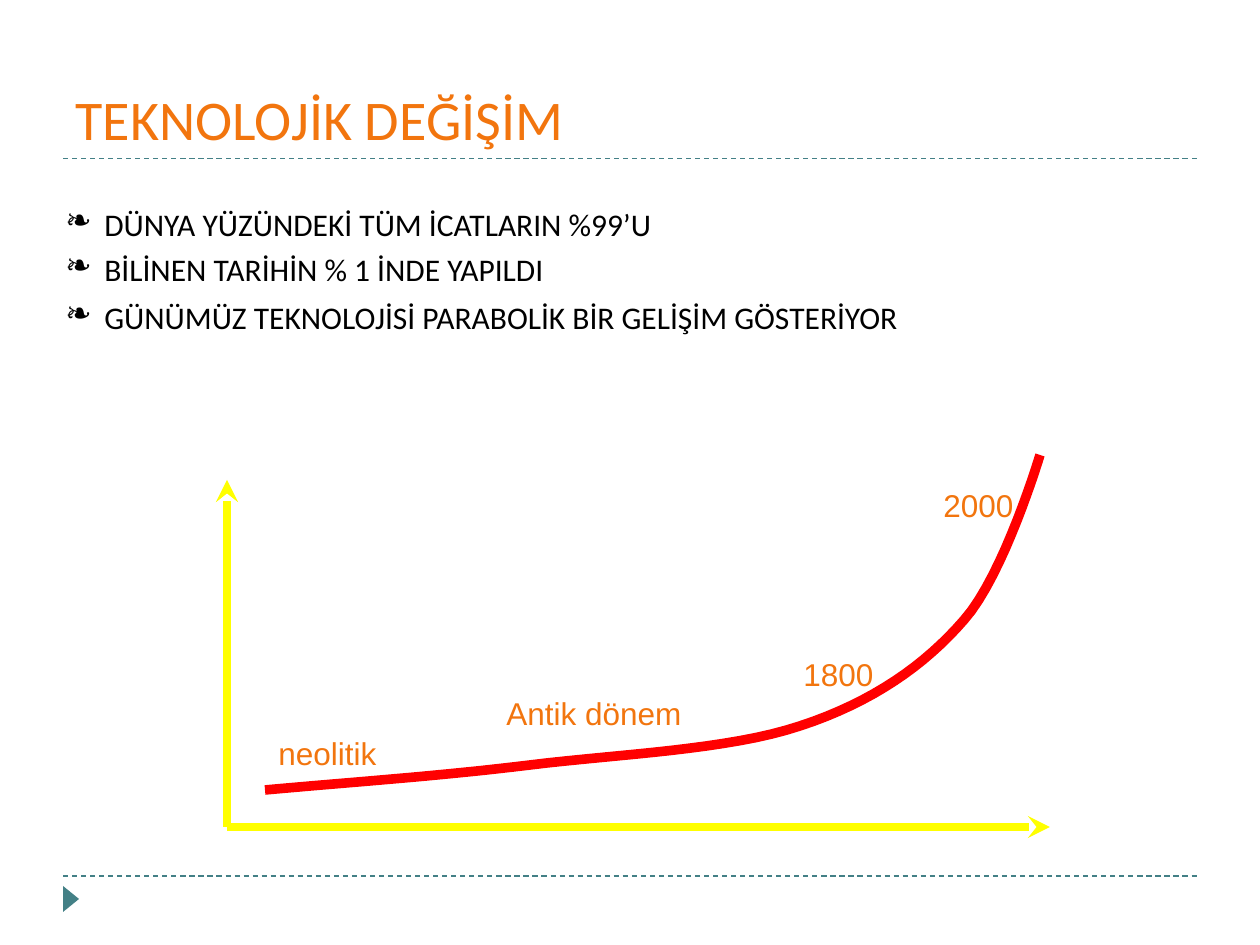
from lxml import etree
from pptx import Presentation
from pptx import util as u
from pptx.dml.color import RGBColor
from pptx.enum import dml, shapes, text
from pptx.oxml.ns import qn

PX = 914400 / 126
ORANGE, TEAL, YELLOW, RED = "F2750E", "438086", "FFFF00", "FF0000"

TITLE = "TEKNOLOJİK DEĞİŞİM"
BULLETS = [  # text, space before in points
    ("DÜNYA YÜZÜNDEKİ TÜM İCATLARIN %99’U", 0),
    ("BİLİNEN TARİHİN % 1 İNDE YAPILDI", 4.2),
    ("GÜNÜMÜZ TEKNOLOJİSİ PARABOLİK BİR GELİŞİM GÖSTERİYOR", 5.6),
]
ERAS = [  # label, left, top, width
    ("neolitik", 266, 728, 129),
    ("Antik dönem", 494, 688, 202),
    ("1800", 791, 649, 96),
    ("2000", 931, 480, 96),
]
RULES = [876, 158]
ORIGIN = (227, 827)
AXIS_ENDS = [(1050, 827), (227, 480)]
CURVE_START = (265, 790)
CURVE = [  # two control points and an end point for each Bézier piece
    [(353, 782), (441, 776), (530, 765)],
    [(620, 754), (728, 750), (800, 726)],
    [(873, 702), (925, 665), (964, 620)],
    [(1004, 575), (1040, 455), (1040, 455)],
]
STEPS = 16


def px(*lengths):
    return [u.Emu(round(length * PX)) for length in lengths]


def color(value):
    return RGBColor.from_string(value)


def write(para, words, font, size, fill):
    span = para.add_run()
    span.text = words
    span.font.name = font
    span.font.size = u.Pt(size)
    span.font.color.rgb = color(fill)


def add_line(page, start, end, fill, width):
    line = page.shapes.add_connector(shapes.MSO_CONNECTOR.STRAIGHT, *px(*start, *end))
    line.line.color.rgb = color(fill)
    line.line.width = u.Pt(width)
    etree.SubElement(line._element.spPr, qn("a:effectLst"))
    return line


def add_box(page, left, top, width, height):
    box = page.shapes.add_textbox(*px(left, top, width, height))
    box.text_frame.word_wrap = True
    return box.text_frame


def add_bullet(para):
    props = para._p.get_or_add_pPr()
    indent = px(39)[0]
    props.set("marL", str(indent))
    props.set("indent", str(-indent))
    etree.SubElement(props, qn("a:buChar"), char="❧")


def bezier(points, t):
    weights = ((1 - t) ** 3, 3 * t * (1 - t) ** 2, 3 * t * t * (1 - t), t ** 3)
    return tuple(sum(w * p[axis] for w, p in zip(weights, points)) for axis in (0, 1))


deck = Presentation()
deck.slide_width, deck.slide_height = u.Inches(10), u.Inches(7.5)
page = deck.slides.add_slide(deck.slide_layouts[5])

for y in RULES:
    add_line(page, (63, y), (1197, y), TEAL, 0.75).line.dash_style = dml.MSO_LINE.DASH

marker = page.shapes.add_shape(shapes.MSO_SHAPE.ISOSCELES_TRIANGLE, *px(58, 891, 26, 16))
marker.rotation = 90
marker.shadow.inherit = False
marker.fill.solid()
marker.fill.fore_color.rgb = color(TEAL)
marker.line.fill.background()

title = page.shapes.title
title.left, title.top, title.width, title.height = px(63, 32, 1134, 126)
title.fill.solid()
title.fill.fore_color.rgb = color("FFFFFF")
title.text_frame.vertical_anchor = text.MSO_ANCHOR.BOTTOM
heading = title.text_frame.paragraphs[0]
heading.alignment = text.PP_ALIGN.LEFT
write(heading, TITLE, "Calibri", 32, ORANGE)
page.shapes._spTree.append(title._element)  # in front of the rule it touches

frame = add_box(page, 53, 199, 1124, 145)
for index, (words, gap) in enumerate(BULLETS):
    para = frame.add_paragraph() if index else frame.paragraphs[0]
    if gap:
        para.space_before = u.Pt(gap)
    add_bullet(para)
    write(para, words, "Calibri", 18, "000000")

for end in AXIS_ENDS:
    axis = add_line(page, ORIGIN, end, YELLOW, 4.25)
    etree.SubElement(axis.line._get_or_add_ln(), qn("a:tailEnd"), type="stealth")

points, start = [], CURVE_START
for piece in CURVE:
    points += [px(*bezier([start, *piece], step / STEPS)) for step in range(1, STEPS + 1)]
    start = piece[-1]
builder = page.shapes.build_freeform(*px(*CURVE_START), scale=1.0)
builder.add_line_segments(points, close=False)
curve = builder.convert_to_shape()
curve.shadow.inherit = False
curve.fill.background()
curve.line.color.rgb = color(RED)
curve.line.width = u.Pt(5.5)

for label, left, top, width in ERAS:
    frame = add_box(page, left, top, width, 50)
    write(frame.paragraphs[0], label, "Arial", 18, ORANGE)

deck.save("out.pptx")
